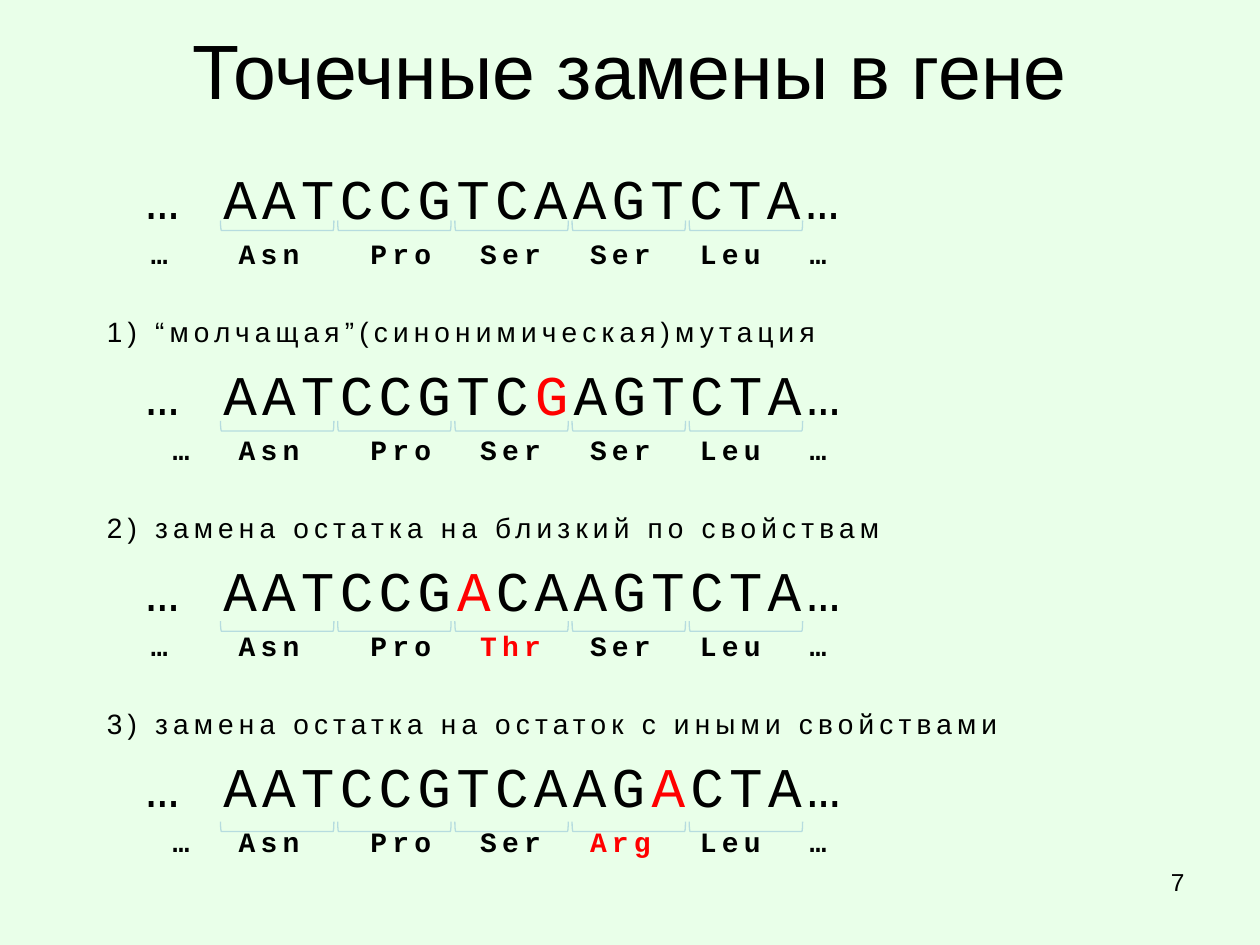
"""Build a slide on point substitutions in a gene."""
from lxml import etree
from pptx import Presentation
from pptx.dml.color import RGBColor
from pptx.enum.shapes import MSO_SHAPE
from pptx.enum.text import MSO_ANCHOR, PP_ALIGN
from pptx.oxml.ns import qn
from pptx.util import Inches, Pt

BRACKET = MSO_SHAPE.RIGHT_BRACKET
MIDDLE, TOP = MSO_ANCHOR.MIDDLE, MSO_ANCHOR.TOP
LEFT, CENTER, RIGHT = PP_ALIGN.LEFT, PP_ALIGN.CENTER, PP_ALIGN.RIGHT

TITLE = "Точечные замены в гене"
PAGE = "7"
BLOCKS = [
    ("", "AATCCGTCAAGTCTA", "Asn Pro Ser Ser Leu", 2),
    ("1) “молчащая”(синонимическая)мутация",
     "AATCCGTC*G*AGTCTA", "Asn Pro Ser Ser Leu", 3),
    ("2) замена остатка на близкий по свойствам",
     "AATCCG*A*CAAGTCTA", "Asn Pro *Thr* Ser Leu", 2),
    ("3) замена остатка на остаток с иными свойствами",
     "AATCCGTCAAG*A*CTA", "Asn Pro Ser *Arg* Leu", 3),
]
BLACK, RED, BACK, LINE = "000000", "FF0000", "E9FFE9", "B6DCDF"
SANS, MONO = "Arial", "Courier New"
LETTER_PT = 12.55
RESIDUE_COLUMNS = [6, 12, 17, 22, 27, 32]
HEADING_GAP, CODON_GAP, RESIDUE_GAP = 25.6, 6.4, 3.2
CODONS, CODON_STEP, BLOCK_STEP = 5, 0.93, 1.59
BRACKET_X, BRACKET_Y, BRACKET_W, BRACKET_H = 2.16, 1.34, 0.08, 0.9


def rgb(color):
    """Turn a hex string into a colour."""
    return RGBColor.from_string(color)


def add_box(s, x, y, w, h, anchor=TOP):
    """Add a wrapping text box and return its frame."""
    tf = s.shapes.add_textbox(Inches(x), Inches(y), Inches(w), Inches(h)).text_frame
    tf.word_wrap = True
    tf.vertical_anchor = anchor
    return tf


def write(p, text, size, font=SANS, bold=False, spacing=0, before=0, align=LEFT):
    """Fill a paragraph, with the parts between asterisks in red."""
    p.alignment = align
    p.space_before = Pt(before)
    for i, part in enumerate(text.split("*")):
        if not part:
            continue
        r = p.add_run()
        r.text = part
        r.font.size, r.font.name, r.font.bold = Pt(size), font, bold
        r.font.color.rgb = rgb(RED if i % 2 else BLACK)
        if spacing:
            r.font._element.set("spc", str(spacing * 100))


def set_tabs(p, columns):
    """Place left tab stops at the given letter columns."""
    tabs = etree.SubElement(p._p.get_or_add_pPr(), qn("a:tabLst"))
    for column in columns:
        etree.SubElement(tabs, qn("a:tab"), pos=str(Pt(column * LETTER_PT)), algn="l")


def add_block(tf, heading, codons, residues, first):
    """Write a heading, the codon line and the residue line."""
    if heading:
        write(tf.add_paragraph(), heading, 16, spacing=3, before=HEADING_GAP)
        p = tf.add_paragraph()
    else:
        p = tf.paragraphs[0]
    write(p, f" … {codons}…", 32, MONO, spacing=3, before=CODON_GAP)
    p = tf.add_paragraph()
    cells = ["", "…", *residues.split(), "…"]
    write(p, "\t".join(cells), 16, MONO, True, 3, RESIDUE_GAP)
    set_tabs(p, [first, *RESIDUE_COLUMNS])


def add_bracket(s, row, column):
    """Draw the bracket under one codon."""
    sp = s.shapes.add_shape(BRACKET, Inches(BRACKET_X + column * CODON_STEP),
                            Inches(BRACKET_Y + row * BLOCK_STEP),
                            Inches(BRACKET_W), Inches(BRACKET_H))
    sp.rotation = 90
    sp.shadow.inherit = False
    sp.fill.background()
    sp.line.color.rgb = rgb(LINE)
    sp.line.width = Pt(0.75)


def main():
    """Assemble and save the slide."""
    prs = Presentation()
    prs.slide_width, prs.slide_height = Inches(10), Inches(7.5)
    s = prs.slides.add_slide(prs.slide_layouts[6])
    s.background.fill.solid()
    s.background.fill.fore_color.rgb = rgb(BACK)

    title = add_box(s, 0.5, -0.08, 9, 1.25, MIDDLE)
    write(title.paragraphs[0], TITLE, 44, align=CENTER)
    body = add_box(s, 0.75, 1.25, 9, 6.08)
    for row, block in enumerate(BLOCKS):
        add_block(body, *block)
        for column in range(CODONS):
            add_bracket(s, row, column)
    number = add_box(s, 7.17, 6.83, 2.33, 0.52)
    write(number.paragraphs[0], PAGE, 14, align=RIGHT)
    prs.save("out.pptx")


if __name__ == "__main__":
    main()
